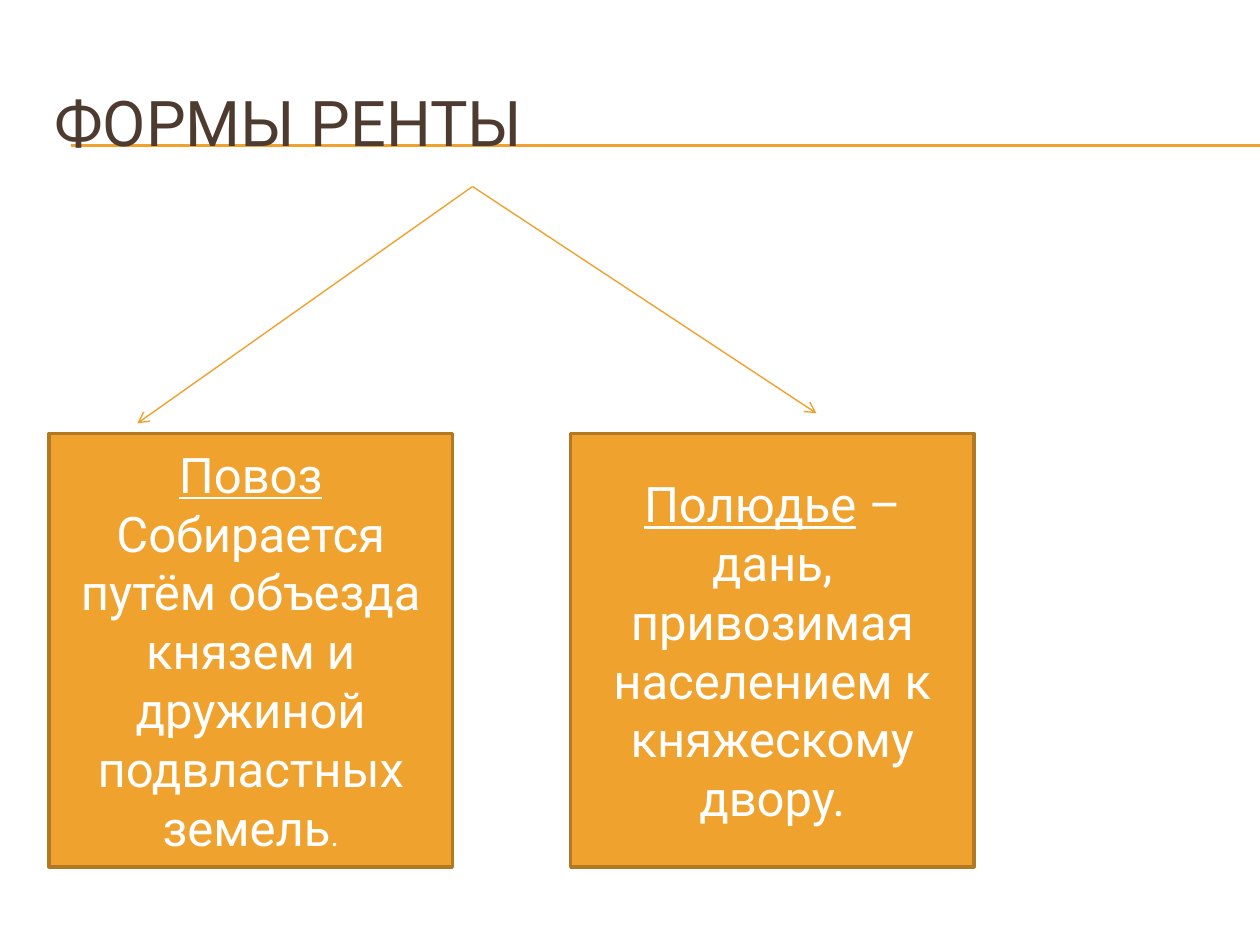
from lxml import etree
from pptx import Presentation
from pptx.dml.color import RGBColor
from pptx.enum.shapes import MSO_CONNECTOR, MSO_SHAPE
from pptx.enum.text import MSO_ANCHOR, PP_ALIGN
from pptx.oxml.ns import qn
from pptx.util import Inches, Pt

STRAIGHT = MSO_CONNECTOR.STRAIGHT
RECTANGLE = MSO_SHAPE.RECTANGLE
MIDDLE = MSO_ANCHOR.MIDDLE
LEFT, CENTER = PP_ALIGN.LEFT, PP_ALIGN.CENTER

FONT = "Roboto"
COLORS = {"accent": "F0A22E", "border": "B27822", "title": "4E3B30", "text": "FFFFFF"}
TITLE_RULES = [1.15, 1.16]
ARROW_START = (3.75, 1.48)
ARROW_ENDS = [(1.09, 3.36), (6.48, 3.28)]
BOX_LEFT, BOX_TOP, BOX_WIDTH, BOX_HEIGHT, BOX_STEP = 0.39, 3.44, 3.2, 3.44, 4.14
BOXES = [
    [
        [("Повоз", 28, True)],
        [
            ("Собирается путём объезда князем и дружиной подвластных земель", 28, False),
            (".", 18, False),
        ],
    ],
    [
        [
            ("Полюдье", 28, True),
            (" – дань, привозимая населением к княжескому двору.", 28, False),
        ],
    ],
]


def color(name):
    return RGBColor.from_string(COLORS[name])


def add_line(slide, start, end, width):
    points = [Inches(value) for value in (*start, *end)]
    connector = slide.shapes.add_connector(STRAIGHT, *points)
    connector.line.color.rgb = color("accent")
    connector.line.width = Pt(width)
    etree.SubElement(connector.element.spPr, qn("a:effectLst"))
    return connector


presentation = Presentation()
presentation.slide_width = Inches(10)
presentation.slide_height = Inches(7.5)
slide = presentation.slides.add_slide(presentation.slide_layouts[5])

for height in TITLE_RULES:
    add_line(slide, (0.56, height), (10, height), 0.75)

title = slide.shapes.title
title.left, title.top = Inches(0.33), Inches(0.5)
title.width, title.height = Inches(9.5), Inches(0.92)
title.text_frame.text = "ФОРМЫ РЕНТЫ"
title.text_frame.vertical_anchor = MIDDLE
paragraph = title.text_frame.paragraphs[0]
paragraph.alignment = LEFT
paragraph.font.name = FONT
paragraph.font.size = Pt(36)
paragraph.font.color.rgb = color("title")
slide.shapes.element.append(title.element)

for end in ARROW_ENDS:
    arrow = add_line(slide, ARROW_START, end, 0.79)
    outline = arrow.element.spPr.find(qn("a:ln"))
    etree.SubElement(outline, qn("a:tailEnd"), type="arrow")

for column, paragraphs in enumerate(BOXES):
    box = slide.shapes.add_shape(
        RECTANGLE,
        Inches(BOX_LEFT + column * BOX_STEP),
        Inches(BOX_TOP),
        Inches(BOX_WIDTH),
        Inches(BOX_HEIGHT),
    )
    box.shadow.inherit = False
    box.fill.solid()
    box.fill.fore_color.rgb = color("accent")
    box.line.color.rgb = color("border")
    box.line.width = Pt(2)
    frame = box.text_frame
    frame.word_wrap = True
    frame.vertical_anchor = MIDDLE
    for index, runs in enumerate(paragraphs):
        paragraph = frame.add_paragraph() if index else frame.paragraphs[0]
        paragraph.alignment = CENTER
        paragraph.font.name = FONT
        paragraph.font.color.rgb = color("text")
        for text, size, underline in runs:
            run = paragraph.add_run()
            run.text = text
            run.font.size = Pt(size)
            run.font.underline = underline

presentation.save("out.pptx")
